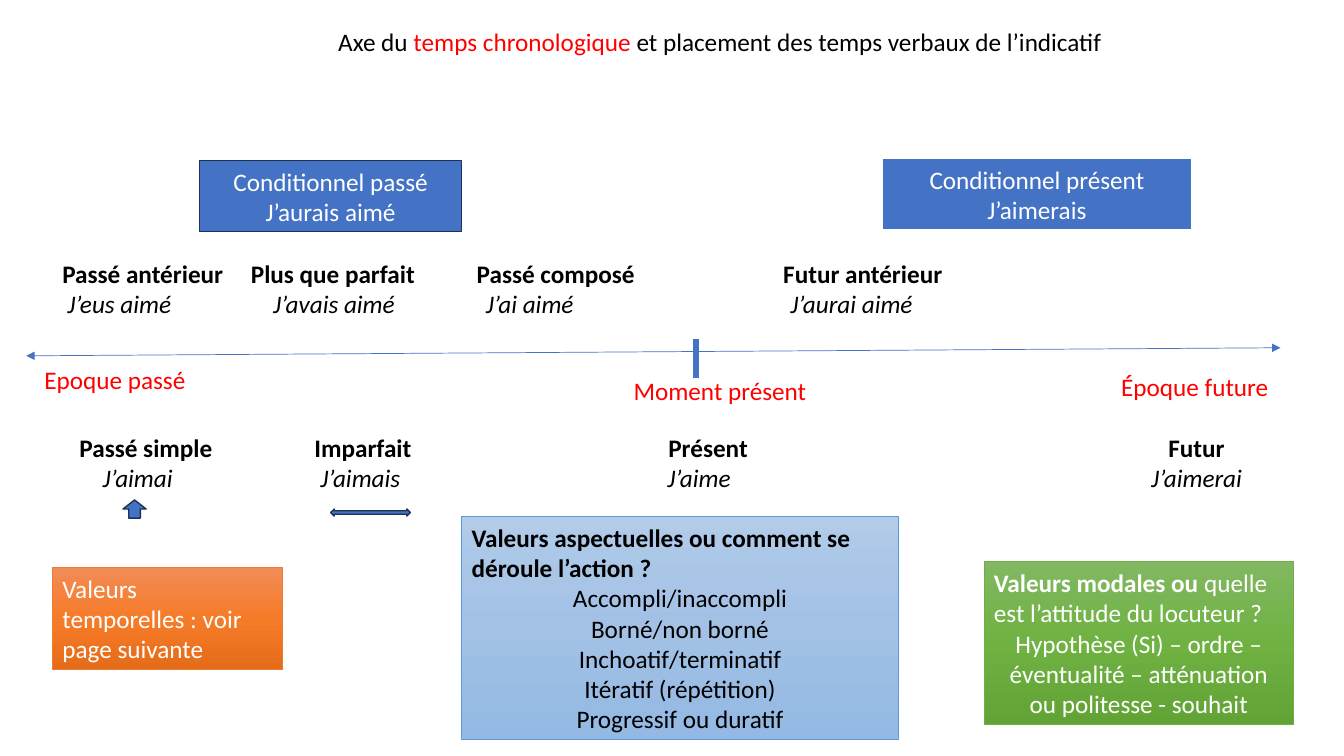
from copy import deepcopy

from lxml import etree
from pptx import Presentation
from pptx.dml.color import RGBColor
from pptx.enum import shapes, text
from pptx.oxml import ns
from pptx.util import Inches, Pt

COLORS = {"blue": "4472C4", "navy": "1E3256", "red": "FF0000", "black": "000000",
          "white": "FFFFFF", "orange": "ED7D31", "sky": "5B9BD5", "green": "70AD47"}
GRADIENTS = {"orange": ("F18C57", "F67B28", "E56C19"),
             "sky": ("B1CBE9", "A3C1E5", "93B9E4"),
             "green": ("81B861", "6FB242", "62A336")}
LEFT, CENTER = text.PP_ALIGN.LEFT, text.PP_ALIGN.CENTER
TOP, MIDDLE = text.MSO_ANCHOR.TOP, text.MSO_ANCHOR.MIDDLE
BOLD, ITALIC, PLAIN = {"bold": True}, {"italic": True}, {}

# A paragraph is (alignment, [(words, colour, format)]).
TITLE = [(CENTER, [("Axe du ", "black", PLAIN), ("temps chronologique ", "red", PLAIN),
                   ("et placement des temps verbaux de l’indicatif", "black", PLAIN)])]
EPOCHS = [("Epoque passé", (0.3, 3.57, 1.68, 0.4)),
          ("Moment présent", (5.8, 3.67, 2.68, 0.4)),
          ("Époque future", (11, 3.63, 1.7, 0.4))]

# Each tense: name, its left edge, example, its left edge (inches on the slide).
TENSES = {
    2.51: [("Passé antérieur", 0.62, "J’eus aimé", 0.67),
           ("Plus que parfait", 2.49, "J’avais aimé", 2.71),
           ("Passé composé", 4.73, "J’ai aimé", 4.82),
           ("Futur antérieur", 7.77, "J’aurai aimé", 7.84)],
    4.24: [("Passé simple", 0.79, "J’aimai", 1.02),
           ("Imparfait", 3.12, "J’aimais", 3.18),
           ("Présent", 6.63, "J’aime", 6.62),
           ("Futur", 11.59, "J’aimerai", 11.42)],
}
CONDITIONALS = [
    (("Conditionnel passé", "J’aurais aimé"), (1.98, 1.59, 2.6, 0.71), "navy", 1),
    (("Conditionnel présent", "J’aimerais"), (8.75, 1.57, 3.07, 0.71), "white", 1.5),
]
ASPECTS = ["Accompli/inaccompli", "Borné/non borné", "Inchoatif/terminatif",
           "Itératif (répétition)", "Progressif ou duratif"]
VALUES = [
    ("orange", (0.52, 5.63, 2.28, 1.01),
     [(LEFT, [("Valeurs temporelles : voir page suivante", "white", PLAIN)])]),
    ("sky", (4.58, 5.12, 4.33, 2.22),
     [(LEFT, [("Valeurs aspectuelles ou comment se déroule l’action ?", "black", BOLD)])]
     + [(CENTER, [(aspect, "black", PLAIN)]) for aspect in ASPECTS]),
    ("green", (9.76, 5.57, 3.07, 1.62),
     [(LEFT, [("Valeurs modales ou ", "white", BOLD),
              ("quelle est l’attitude du locuteur ?", "white", PLAIN)]),
      (CENTER, [("Hypothèse (Si) – ordre – éventualité – atténuation ou politesse - souhait",
                 "white", PLAIN)])]),
]
ARROWS = [(shapes.MSO_SHAPE.UP_ARROW, (1.22, 4.96, 0.23, 0.18)),
          (shapes.MSO_SHAPE.LEFT_RIGHT_ARROW, (3.28, 5.05, 0.79, 0.07))]
ROW_LEFT, ROW_WIDTH, INSET = 0.3, 12.73, 0.1

prs = Presentation()
prs.slide_width, prs.slide_height = Inches(13.33), Inches(7.5)
slide = prs.slides.add_slide(prs.slide_layouts[6])


def rgb(name):
    return RGBColor.from_string(COLORS[name])


def write(shape, paragraphs, anchor):
    frame = shape.text_frame
    frame.word_wrap = True
    frame.vertical_anchor = anchor
    for i, (alignment, runs) in enumerate(paragraphs):
        paragraph = frame.add_paragraph() if i else frame.paragraphs[0]
        paragraph.alignment = alignment
        for words, color, style in runs:
            run = paragraph.add_run()
            run.text = words
            run.font.color.rgb = rgb(color)
            for key, value in {"name": "Calibri", "size": Pt(18), **style}.items():
                setattr(run.font, key, value)
    return frame


def add_text(box, paragraphs):
    return write(slide.shapes.add_textbox(*map(Inches, box)), paragraphs, TOP)


def add_tense_row(top, tenses):
    """Line up names and examples with one tab stop per tense."""
    names, name_lefts, examples, example_lefts = zip(*tenses)
    lines = [(names, BOLD), (examples, ITALIC)]
    frame = add_text((ROW_LEFT, top, ROW_WIDTH, 0.71),
                     [(LEFT, [("\t" + "\t".join(words), "black", style)])
                      for words, style in lines])
    for paragraph, lefts in zip(frame.paragraphs, (name_lefts, example_lefts)):
        tabs = etree.SubElement(paragraph._p.get_or_add_pPr(), ns.qn("a:tabLst"))
        for left in lefts:
            etree.SubElement(tabs, ns.qn("a:tab"), algn="l",
                             pos=str(Inches(left - ROW_LEFT - INSET)))


def add_block(kind, box, outline, width, fill="blue"):
    block = slide.shapes.add_shape(kind, *map(Inches, box))
    block.shadow.inherit = False
    block.line.color.rgb = rgb(outline)
    block.line.width = Pt(width)
    if fill in GRADIENTS:
        block.fill.gradient()
        block.fill.gradient_angle = 270
        stop_list = block._element.spPr.find(".//" + ns.qn("a:gsLst"))
        stop_list.append(deepcopy(stop_list[-1]))
        for i, (stop, color) in enumerate(zip(block.fill.gradient_stops, GRADIENTS[fill])):
            stop.position = i / 2
            stop.color.rgb = RGBColor.from_string(color)
    else:
        block.fill.solid()
        block.fill.fore_color.rgb = rgb(fill)
    return block


def add_line(start, end, width, arrowheads=()):
    line = slide.shapes.add_connector(shapes.MSO_CONNECTOR.STRAIGHT,
                                      *map(Inches, start + end))
    line.line.color.rgb = rgb("blue")
    line.line.width = Pt(width)
    for tag in arrowheads:
        etree.SubElement(line.line._get_or_add_ln(), ns.qn(tag), type="triangle")
    etree.SubElement(line._element.spPr, ns.qn("a:effectLst"))


add_line((0.26, 3.53), (12.7, 3.45), 0.5, ("a:headEnd", "a:tailEnd"))
add_line((6.9, 3.36), (6.9, 3.75), 4.5)
add_text((2.26, 0.21, 9.76, 0.4), TITLE)
for epoch, box in EPOCHS:
    add_text(box, [(CENTER, [(epoch, "red", PLAIN)])])
for top, tenses in TENSES.items():
    add_tense_row(top, tenses)
for lines, box, outline, width in CONDITIONALS:
    write(add_block(shapes.MSO_SHAPE.RECTANGLE, box, outline, width),
          [(CENTER, [(line, "white", PLAIN)]) for line in lines], MIDDLE)
for kind, box in ARROWS:
    add_block(kind, box, "navy", 1)
for color, box, paragraphs in VALUES:
    write(add_block(shapes.MSO_SHAPE.RECTANGLE, box, color, 0.5, color), paragraphs, MIDDLE)

prs.save("out.pptx")
